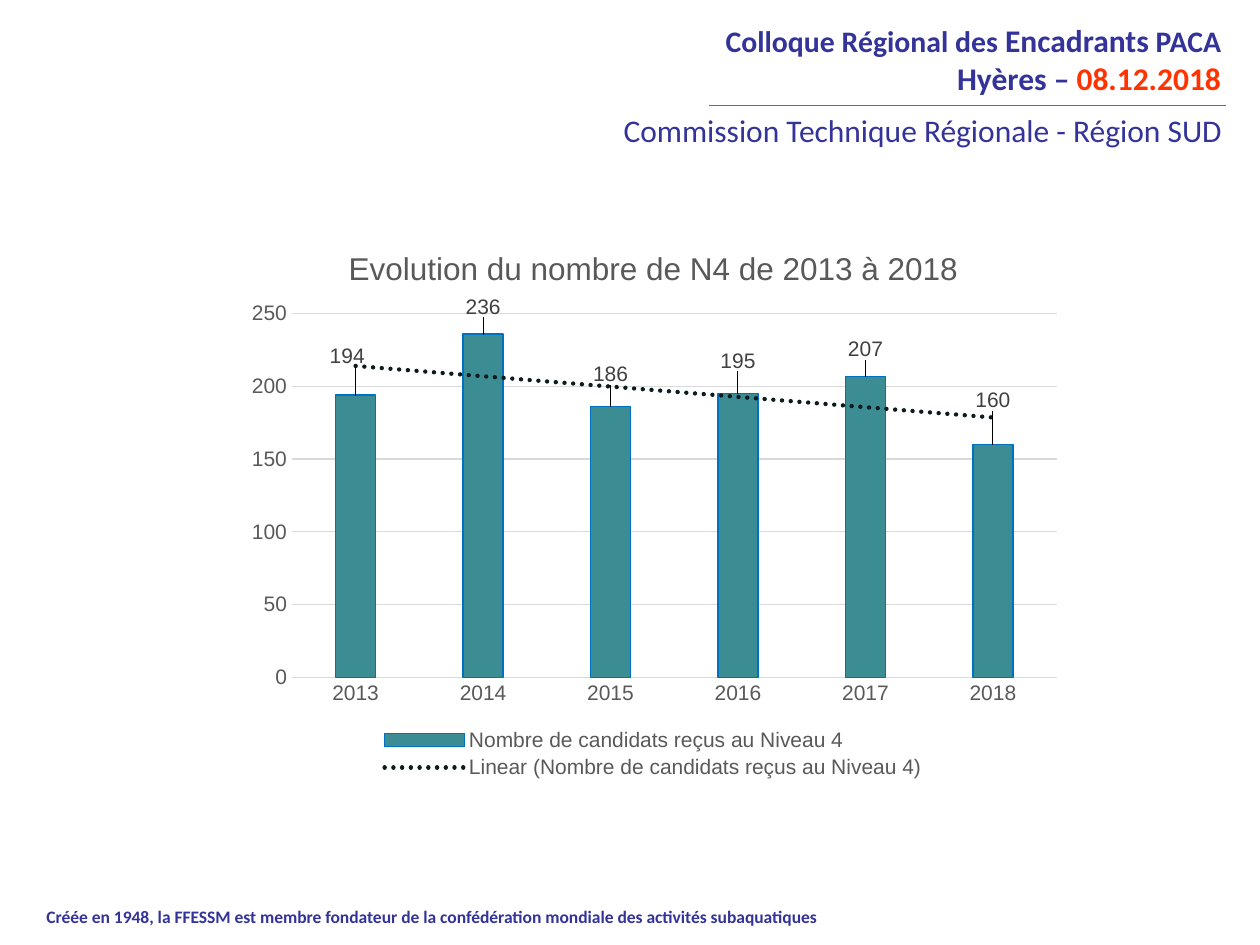
from dataclasses import dataclass

from lxml import etree
from pptx import Presentation
from pptx.chart.data import CategoryChartData
from pptx.dml.color import RGBColor
from pptx.enum import chart as ch, shapes, text
from pptx.oxml import parse_xml
from pptx.oxml.ns import nsdecls, qn
from pptx.util import Inches, Pt


@dataclass(frozen=True)
class Theme:
    navy: str = "333399"
    orange: str = "FF3300"
    teal: str = "3C8C93"
    bar_edge: str = "0070C0"
    trend: str = "0C1C1D"
    grey: str = "595959"
    label: str = "404040"
    grid: str = "D9D9D9"
    heading_font: str = "Calibri"
    chart_font: str = "Arial"
    heading: float = 18
    subheading: float = 17
    footer: float = 10
    chart_text: float = 12


@dataclass(frozen=True)
class Run:
    words: str
    size: float
    color: str
    bold: bool = True


@dataclass(frozen=True)
class Caption:
    box: tuple[float, float, float, float]
    lines: list[list[Run]]
    align: text.PP_ALIGN


@dataclass(frozen=True)
class Year:
    """One bar; the shifts move its label, as fractions of the chart."""
    year: int
    candidates: int
    shift_x: float
    shift_y: float


THEME = Theme()
RIGHT, LEFT = text.PP_ALIGN.RIGHT, text.PP_ALIGN.LEFT
CAPTIONS = [
    Caption((4.21, 0.12, 5.58, 0.71), [
        [Run("Colloque Régional des ", THEME.subheading, THEME.navy),
         Run("Encadrants", THEME.heading, THEME.navy),
         Run(" PACA", THEME.subheading, THEME.navy)],
        [Run("Hyères –", THEME.heading, THEME.navy),
         Run(" 08.12.2018", THEME.heading, THEME.orange)],
    ], RIGHT),
    Caption((4.76, 0.83, 5.04, 0.4), [
        [Run("Commission Technique Régionale - Région SUD",
             THEME.heading, THEME.navy, False)],
    ], RIGHT),
    Caption((0.27, 7.14, 6.56, 0.27), [
        [Run("Créée en 1948, la FFESSM est membre fondateur de la "
             "confédération mondiale des activités subaquatiques",
             THEME.footer, THEME.navy)],
    ], LEFT),
]
YEARS = [
    Year(2013, 194, -0.01, -0.04),
    Year(2014, 236, 0, -0.02),
    Year(2015, 186, 0, -0.03),
    Year(2016, 195, 0, -0.03),
    Year(2017, 207, 0, -0.02),
    Year(2018, 160, 0, -0.05),
]


def set_font(font, name: str, size: float, color: str, bold: bool = False) -> None:
    formats = {"name": name, "size": Pt(size), "bold": bold}
    for attribute, value in formats.items():
        setattr(font, attribute, value)
    font.color.rgb = RGBColor.from_string(color)


def set_line(line, color: str, width: float = 0.75) -> None:
    line.color.rgb = RGBColor.from_string(color)
    line.width = Pt(width)


def add_caption(slide, caption: Caption) -> None:
    frame = slide.shapes.add_textbox(*map(Inches, caption.box)).text_frame
    frame.word_wrap = True
    frame.auto_size = text.MSO_AUTO_SIZE.SHAPE_TO_FIT_TEXT
    for index, runs in enumerate(caption.lines):
        paragraph = frame.add_paragraph() if index else frame.paragraphs[0]
        paragraph.alignment = caption.align
        for item in runs:
            run = paragraph.add_run()
            run.text = item.words
            set_font(run.font, THEME.heading_font, item.size, item.color, item.bold)


def add_rule(slide) -> None:
    rule = slide.shapes.add_connector(
        shapes.MSO_CONNECTOR.STRAIGHT,
        Inches(5.63), Inches(0.84), Inches(9.73), Inches(0.84))
    set_line(rule.line, THEME.orange)
    etree.SubElement(rule._element.spPr, qn("a:effectLst"))


def manual_layout(**values):
    parts = "".join(f'<c:{tag} val="{value}"/>' for tag, value in values.items())
    return parse_xml(f"<c:layout {nsdecls('c')}><c:manualLayout>{parts}"
                     "</c:manualLayout></c:layout>")


def style_axes(chart) -> None:
    for axis in (chart.category_axis, chart.value_axis):
        axis.major_tick_mark = axis.minor_tick_mark = ch.XL_TICK_MARK.NONE
        set_font(axis.tick_labels.font, THEME.chart_font, THEME.chart_text, THEME.grey)
    set_line(chart.category_axis.format.line, THEME.grid)
    values = chart.value_axis
    values.format.line.fill.background()
    values.minimum_scale, values.maximum_scale, values.major_unit = 0, 250, 50
    set_line(values.major_gridlines.format.line, THEME.grid)


def label_bars(series) -> None:
    labels = series.data_labels
    labels.show_value = True
    labels.position = ch.XL_LABEL_POSITION.OUTSIDE_END
    set_font(labels.font, THEME.chart_font, THEME.chart_text, THEME.label)
    for index, year in enumerate(YEARS):
        label = series.points[index].data_label
        set_font(label.font, THEME.chart_font, THEME.chart_text, THEME.label)
        label.position = ch.XL_LABEL_POSITION.OUTSIDE_END
    for year, element in zip(YEARS, series._element.iter(qn("c:dLbl"))):
        element.find(qn("c:idx")).addnext(
            manual_layout(x=year.shift_x, y=year.shift_y))


def add_trend(series) -> None:
    series._element.find(qn("c:cat")).addprevious(parse_xml(
        f"<c:trendline {nsdecls('c', 'a')}><c:spPr>"
        f'<a:ln w="{Pt(2.5)}" cap="rnd"><a:solidFill>'
        f'<a:srgbClr val="{THEME.trend}"/></a:solidFill>'
        '<a:prstDash val="sysDot"/></a:ln></c:spPr>'
        '<c:trendlineType val="linear"/><c:dispRSqr val="0"/>'
        '<c:dispEq val="0"/></c:trendline>'))


def add_candidates_chart(slide) -> None:
    data = CategoryChartData(number_format="General")
    data.categories = [year.year for year in YEARS]
    data.add_series("Nombre de candidats reçus au Niveau 4",
                    [year.candidates for year in YEARS])
    chart = slide.shapes.add_chart(
        ch.XL_CHART_TYPE.COLUMN_CLUSTERED,
        Inches(1.85), Inches(1.78), Inches(6.67), Inches(4.44), data).chart
    set_font(chart.font, THEME.chart_font, THEME.chart_text, THEME.grey)

    title = chart.chart_title.text_frame
    title.text = "Evolution du nombre de N4 de 2013 à 2018"
    set_font(title.paragraphs[0].runs[0].font,
             THEME.chart_font, THEME.heading, THEME.grey)
    chart.has_legend = True
    chart.legend.position = ch.XL_LEGEND_POSITION.BOTTOM
    chart.legend.include_in_layout = False
    set_font(chart.legend.font, THEME.chart_font, THEME.chart_text, THEME.grey)
    style_axes(chart)

    plot = chart.plots[0]
    plot.vary_by_categories = False
    plot.gap_width, plot.overlap = 219, -27
    bars = plot.series[0]
    bars.format.fill.solid()
    bars.format.fill.fore_color.rgb = RGBColor.from_string(THEME.teal)
    set_line(bars.format.line, THEME.bar_edge)
    label_bars(bars)
    add_trend(bars)

    area = chart._chartSpace.chart.plotArea
    for layout in area.findall(qn("c:layout")):
        area.remove(layout)
    area.insert(0, manual_layout(layoutTarget="inner", xMode="edge", yMode="edge",
                                 x=0.07, y=0.16, w=0.91, h=0.65))


def main() -> None:
    deck = Presentation()
    deck.slide_width, deck.slide_height = Inches(10), Inches(7.5)
    slide = deck.slides.add_slide(deck.slide_layouts[6])
    for caption in CAPTIONS:
        add_caption(slide, caption)
    add_rule(slide)
    add_candidates_chart(slide)
    deck.save("out.pptx")


if __name__ == "__main__":
    main()
